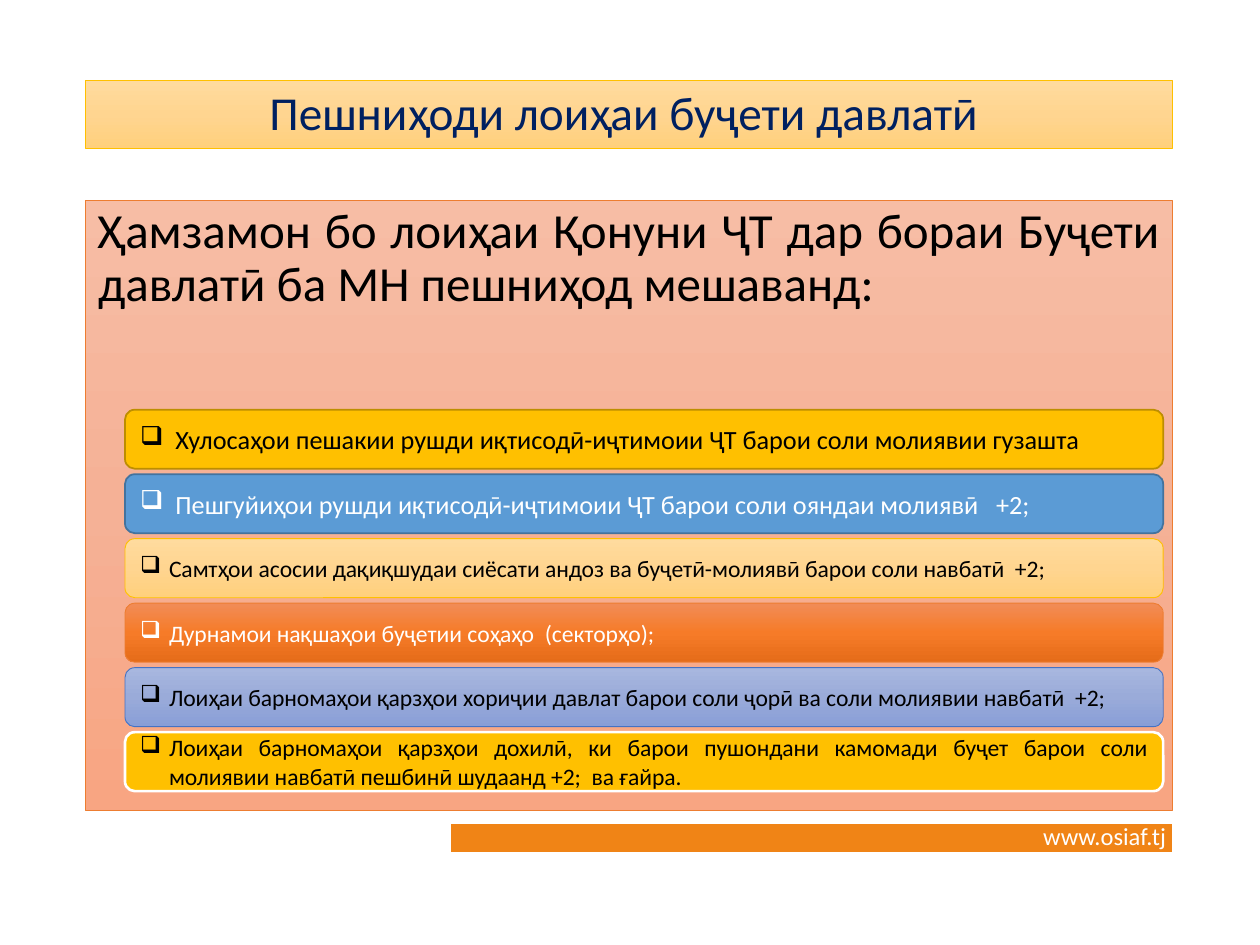
from copy import deepcopy

from lxml.etree import SubElement
from pptx import Presentation
from pptx.dml.color import RGBColor
from pptx.enum.shapes import MSO_CONNECTOR as Link, MSO_SHAPE as Shape
from pptx.enum.text import MSO_ANCHOR as Anchor, MSO_AUTO_SIZE as Fit, PP_ALIGN as Align
from pptx.oxml.ns import qn
from pptx.util import Cm, Pt

FONT = "Calibri"
BLACK = RGBColor(0x00, 0x00, 0x00)
WHITE = RGBColor(0xFF, 0xFF, 0xFF)
NAVY = RGBColor(0x00, 0x20, 0x60)
GOLD = RGBColor(0xFF, 0xC0, 0x00)
BRONZE = RGBColor(0xBD, 0x8E, 0x00)
BLUE = RGBColor(0x5B, 0x9B, 0xD5)
STEEL = RGBColor(0x43, 0x73, 0x9E)
INDIGO = RGBColor(0x44, 0x72, 0xC4)
RUST = RGBColor(0xED, 0x7D, 0x31)
AMBER = RGBColor(0xF0, 0x84, 0x16)
# Gradients run from top to bottom
SAND = [RGBColor(0xFF, 0xDB, 0x9E), RGBColor(0xFF, 0xD5, 0x90), RGBColor(0xFF, 0xD0, 0x7C)]
PEACH = [RGBColor(0xF7, 0xBD, 0xA5), RGBColor(0xF5, 0xB1, 0x96), RGBColor(0xF8, 0xA5, 0x82)]
FLAME = [RGBColor(0xF1, 0x8C, 0x57), RGBColor(0xF6, 0x7B, 0x28), RGBColor(0xE5, 0x6C, 0x19)]
LILAC = [RGBColor(0xA8, 0xB7, 0xDF), RGBColor(0x9A, 0xAB, 0xD9), RGBColor(0x88, 0x9E, 0xD7)]

# Text, size, text colour, fill, line colour, line width, indent
ITEMS = [
    ("Хулосаҳои пешакии рушди иқтисодӣ-иҷтимоии ҶТ барои соли молиявии гузашта  ",
     15, BLACK, GOLD, BRONZE, 1, 0.71),
    ("Пешгуйиҳои рушди иқтисодӣ-иҷтимоии ҶТ барои соли ояндаи молиявӣ   +2;",
     15, WHITE, BLUE, STEEL, 1, 0.71),
    ("Самтҳои асосии дақиқшудаи сиёсати андоз ва буҷетӣ-молиявӣ барои соли навбатӣ  +2;",
     13.5, BLACK, SAND, GOLD, 0.5, 0.58),
    ("Дурнамои нақшаҳои буҷетии соҳаҳо  (секторҳо);",
     13.5, WHITE, FLAME, RUST, 0.5, 0.58),
    ("Лоиҳаи барномаҳои қарзҳои хориҷии давлат барои соли ҷорӣ ва соли молиявии навбатӣ  +2;",
     13.5, BLACK, LILAC, INDIGO, 0.5, 0.58),
    ("Лоиҳаи барномаҳои қарзҳои дохилӣ, ки барои пушондани камомади буҷет барои соли "
     "молиявии навбатӣ пешбинӣ шудаанд +2;  ва ғайра.",
     13.5, BLACK, GOLD, WHITE, 1.5, 0.58),
]


def paint(shape, fill, line, width):
    """Fill with one colour or a list of gradient colours, and outline."""
    if isinstance(fill, list):
        shape.fill.gradient()
        shape.fill.gradient_angle = 270
        stops = shape.fill._fill._gradFill.gsLst
        stops.insert(1, deepcopy(stops[0]))
        for i, (stop, color) in enumerate(zip(shape.fill.gradient_stops, fill)):
            stop.position = i / (len(fill) - 1)
            stop.color.rgb = color
    else:
        shape.fill.solid()
        shape.fill.fore_color.rgb = fill
    shape.line.color.rgb = line
    shape.line.width = Pt(width)


def write(shape, text, size, color, align=Align.LEFT, anchor=Anchor.MIDDLE,
          space=None, indent=None, wrap=True):
    frame = shape.text_frame
    frame.text = text
    frame.word_wrap = wrap
    frame.auto_size = Fit.NONE
    frame.vertical_anchor = anchor
    para = frame.paragraphs[0]
    para.alignment = align
    if space:
        para.line_spacing = space
    if indent:
        props = para._p.get_or_add_pPr()
        props.set("marL", str(Cm(indent)))
        props.set("indent", str(-Cm(indent)))
        SubElement(props, qn("a:buChar")).set("char", "❑")
    font = para.font
    font.name, font.size, font.color.rgb = FONT, Pt(size), color


def block(slide, kind, left, top, width, height):
    shape = slide.shapes.add_shape(kind, Cm(left), Cm(top), Cm(width), Cm(height))
    shape.shadow.inherit = False
    return shape


def footer(slide, left, top, width):
    y = Cm(top)
    bar = slide.shapes.add_connector(Link.STRAIGHT, Cm(left), y, Cm(left + width), y)
    bar.line.color.rgb = AMBER
    bar.line.width = Pt(16)
    SubElement(bar._element.spPr, qn("a:effectLst"))
    label = slide.shapes.add_textbox(Cm(left + width - 2.85), Cm(top - 0.46), Cm(4.04), Cm(0.86))
    write(label, "www.osiaf.tj", 14, WHITE, anchor=Anchor.TOP, wrap=False)


def header(slide, left, top, width, height):
    title = slide.shapes.title
    title.left, title.top, title.width, title.height = map(Cm, (left, top, width, height))
    paint(title, SAND, GOLD, 0.5)
    write(title, "Пешниҳоди лоиҳаи буҷети давлатӣ ", 27, NAVY, Align.CENTER, space=0.9)


def panel(slide, left, top, width, height):
    back = block(slide, Shape.RECTANGLE, left, top, width, height)
    paint(back, PEACH, RUST, 0.5)
    write(back, "Ҳамзамон бо лоиҳаи Қонуни ҶТ дар бораи Буҷети давлатӣ ба МН пешниҳод мешаванд:",
          28, BLACK, Align.JUSTIFY, Anchor.TOP, space=0.9)
    rows(slide, left + 0.79, top + 4.22, width - 0.97)


def rows(slide, left, top, width, height=1.19, step=1.3):
    for i, (text, size, color, fill, line, weight, indent) in enumerate(ITEMS):
        row = block(slide, Shape.ROUNDED_RECTANGLE, left, top + i * step, width, height)
        paint(row, fill, line, weight)
        write(row, text, size, color, Align.JUSTIFY, indent=indent)


def main():
    deck = Presentation()
    deck.slide_width, deck.slide_height = Cm(25.4), Cm(19.05)
    slide = deck.slides.add_slide(deck.slide_layouts[5])
    left, width = 1.73, 21.9
    footer(slide, 9.1, 16.89, left + width - 9.1)
    header(slide, left, 1.63, width, 1.37)
    panel(slide, left, 4.04, width, 12.29)
    deck.save("out.pptx")


if __name__ == "__main__":
    main()
